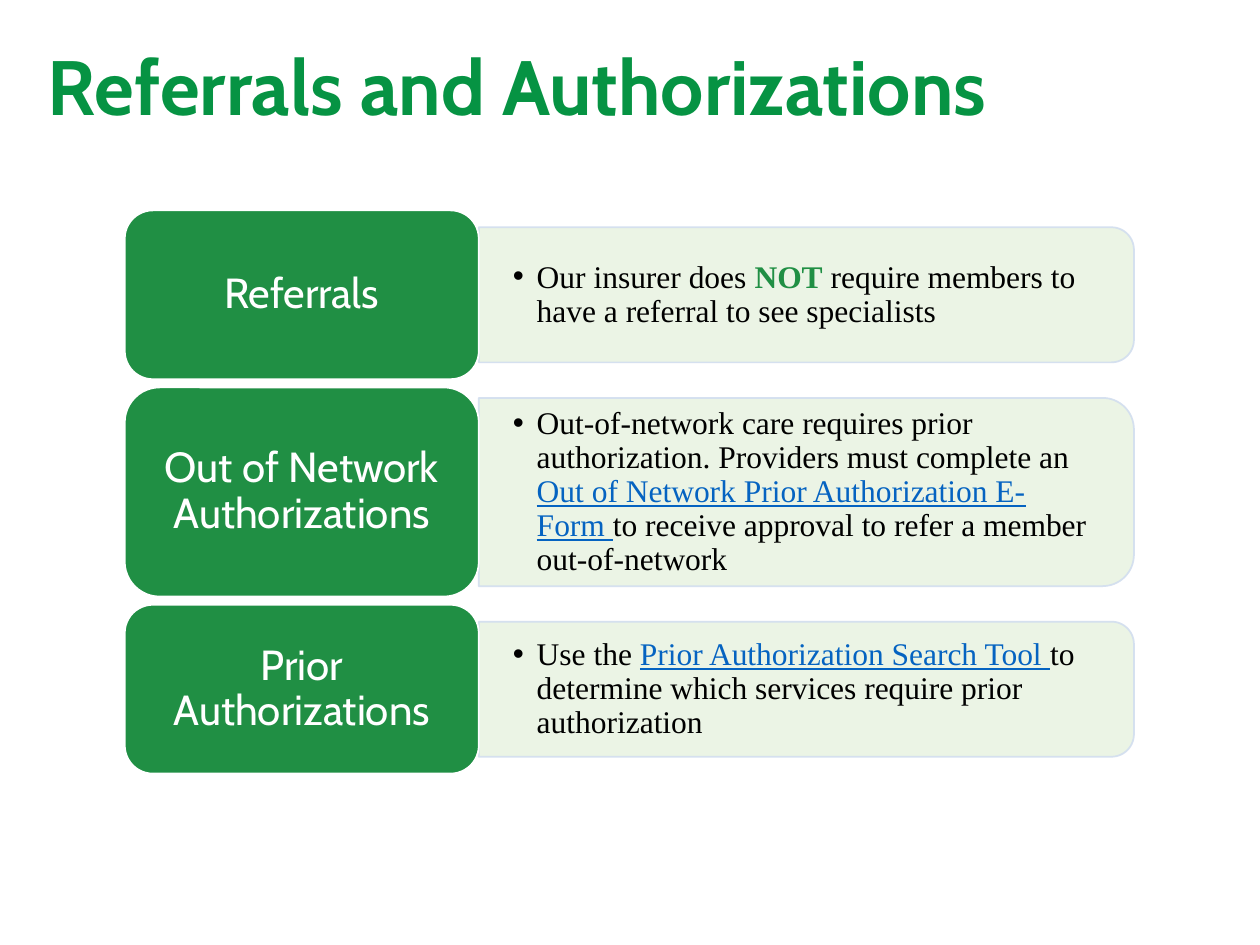
from math import cos, pi, sin

from lxml import etree
from pptx import Presentation
from pptx.dml.color import RGBColor
from pptx.enum.shapes import MSO_SHAPE
from pptx.enum.text import MSO_ANCHOR, PP_ALIGN
from pptx.oxml.ns import qn
from pptx.util import Inches, Pt

ROUND = MSO_SHAPE.ROUNDED_RECTANGLE
MIDDLE = MSO_ANCHOR.MIDDLE
LEFT, CENTER = PP_ALIGN.LEFT, PP_ALIGN.CENTER

# Grid: 100 columns by 75 rows
COLS, ROWS = 100, 75
EDGE, LABEL_W, PANEL_W = 9.9, 28.1, 52
TOP, GAP = 16.7, 0.65
CURVE = 1 / 6
LINK = {"color": "0563C1", "line": True}

# label, row height, panel share of the row, text runs
ITEMS = [
    ("Referrals", 13.4, 0.8, [
        ("Our insurer does ", {}),
        ("NOT", {"color": "208F44", "bold": True}),
        (" require members to have a referral to see specialists", {})]),
    ("Out of Network Authorizations", 16.6, 0.9, [
        ("Out-of-network care requires prior authorization. "
         "Providers must complete an ", {}),
        ("Out of Network Prior Authorization E-Form ", LINK),
        ("to receive approval to refer a member out-of-network", {})]),
    ("Prior Authorizations", 13.4, 0.8, [
        ("Use the ", {}),
        ("Prior Authorization Search Tool ", LINK),
        ("to determine which services require prior authorization", {})]),
]


def rgb(code):
    return RGBColor.from_string(code)


def fade(fill, share):
    """Set the opacity of a solid fill, in percent."""
    tone = fill._xPr.find(qn("a:solidFill"))[0]
    etree.SubElement(tone, qn("a:alpha")).set("val", str(share * 1000))


def write(para, text, font="Times New Roman", size=18, color="000000",
          bold=False, line=False):
    run = para.add_run()
    run.text = text
    face = run.font
    face.name, face.size = font, Pt(size)
    face.bold, face.underline = bold, line
    face.color.rgb = rgb(color)


def bullet(para, indent):
    props = para._p.get_or_add_pPr()
    props.set("marL", str(Inches(indent)))
    props.set("indent", str(-Inches(indent)))
    etree.SubElement(props, qn("a:buFont")).set("typeface", "Arial")
    etree.SubElement(props, qn("a:buChar")).set("char", "•")


class Deck:
    """Holds the style, the file and the current slide."""
    head, green, white = "069343", "208F44", "FFFFFF"
    pale, rim, font = "C5E0B4", "D2DEEF", "Cabin"

    def __init__(self):
        self.file = Presentation()
        self.file.slide_width = Inches(10)
        self.file.slide_height = Inches(7.5)
        self.slide = self.file.slides.add_slide(self.file.slide_layouts[5])

    def box(self, x, y, w, h):
        """Turn grid columns and rows into lengths."""
        col = self.file.slide_width / COLS
        row = self.file.slide_height / ROWS
        return [round(v) for v in (x * col, y * row, w * col, h * row)]

    def frame(self, shape, align, pads):
        """Set up the text frame and return its first paragraph."""
        frame = shape.text_frame
        frame.word_wrap = True
        frame.vertical_anchor = MIDDLE
        left, top, right, low = (Inches(pad) for pad in pads)
        frame.margin_left, frame.margin_right = left, right
        frame.margin_top, frame.margin_bottom = top, low
        para = frame.paragraphs[0]
        para.alignment, para.line_spacing = align, 0.9
        return para

    def paint(self, shape, fill, line):
        shape.shadow.inherit = False
        shape.fill.solid()
        shape.fill.fore_color.rgb = rgb(fill)
        shape.line.color.rgb = rgb(line)
        shape.line.width = Pt(1)

    def title(self, text, *area):
        shape = self.slide.shapes.title
        shape.left, shape.top, shape.width, shape.height = self.box(*area)
        para = self.frame(shape, LEFT, (0.1, 0.05, 0.1, 0.05))
        write(para, text, self.font, 44, self.head, bold=True)

    def label(self, text, *area):
        shape = self.slide.shapes.add_shape(ROUND, *self.box(*area))
        shape.adjustments[0] = CURVE
        self.paint(shape, self.green, self.white)
        para = self.frame(shape, CENTER, (0.08, 0.05, 0.08, 0.05))
        write(para, text, self.font, 24, self.white)

    def panel(self, runs, *area):
        """Draw a box whose right corners alone are round."""
        x, y, w, h = self.box(*area)
        r = h * CURVE
        turn = [i * pi / 32 for i in range(17)]
        arc = [(x + w - r + r * sin(a), y + r - r * cos(a)) for a in turn]
        low = [(px, 2 * y + h - py) for px, py in reversed(arc)]
        path = self.slide.shapes.build_freeform(x, y)
        path.add_line_segments(arc + low + [(x, y + h)], close=True)
        shape = path.convert_to_shape()
        self.paint(shape, self.pale, self.rim)
        fade(shape.fill, 34)
        fade(shape.line.fill, 90)
        para = self.frame(shape, LEFT, (0.27, 0.19, 0.32, 0.19))
        bullet(para, 0.19)
        for text, look in runs:
            write(para, text, **look)


def main():
    deck = Deck()
    deck.title("Referrals and Authorizations", 2.8, 1.7, 86.2, 10.9)
    y = TOP
    for name, high, share, runs in ITEMS:
        inset = high * (1 - share) / 2
        deck.panel(runs, EDGE + LABEL_W, y + inset, PANEL_W, high * share)
        deck.label(name, EDGE, y, LABEL_W, high)
        y += high + GAP
    deck.file.save("out.pptx")


if __name__ == "__main__":
    main()
